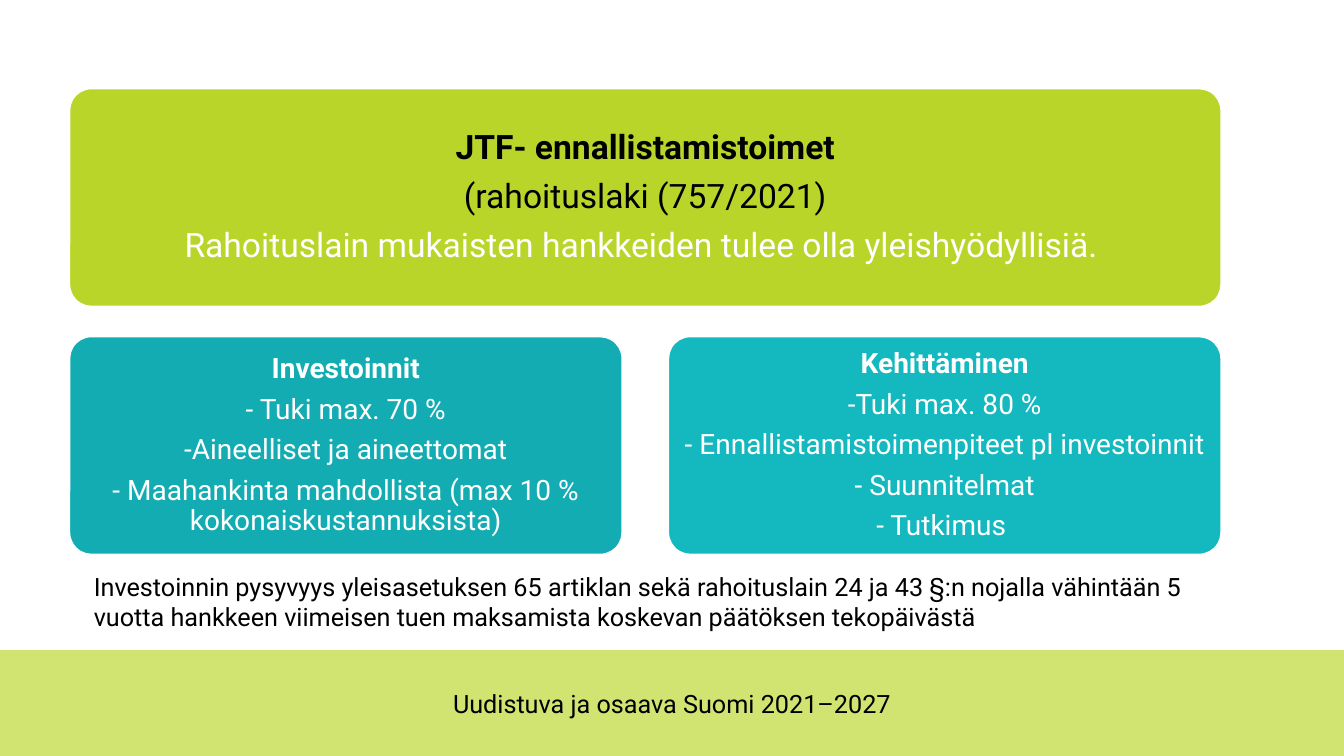
"""Build the slide on JTF restoration measures and their two support types."""
from lxml.etree import SubElement
from pptx import Presentation
from pptx.dml.color import RGBColor
from pptx.enum.shapes import MSO_SHAPE as Shape
from pptx.enum.text import MSO_ANCHOR as Anchor, MSO_AUTO_SIZE as AutoSize, PP_ALIGN as Align
from pptx.oxml.ns import qn
from pptx.util import Inches, Pt

COLORS = {"lime": "BAD52A", "teal": "13ACB3", "aqua": "14B8BF", "band": "D1E371",
          "white": "FFFFFF", "black": "000000"}
FONT = "Roboto"
CARDS = [
    {"box": (0.69, 0.88, 11.42, 2.16), "fill": "lime", "size": 24, "margin": 0.1,
     "lines": [("JTF- ennallistamistoimet", "black"),
               ("(rahoituslaki (757/2021)", "black"),
               ("Rahoituslain mukaisten hankkeiden tulee olla yleishyödyllisiä. ", "white")]},
    {"box": (0.69, 3.34, 5.48, 2.16), "fill": "teal", "size": 20, "margin": 0.08,
     "lines": [("Investoinnit", "white"),
               ("- Tuki max. 70 %", "white"),
               ("-Aineelliset ja aineettomat", "white"),
               ("- Maahankinta mahdollista (max 10 % kokonaiskustannuksista)", "white")]},
    {"box": (6.63, 3.34, 5.48, 2.16), "fill": "aqua", "size": 20, "margin": 0.08,
     "lines": [("Kehittäminen", "white"),
               ("-Tuki max. 80 %", "white"),
               ("- Ennallistamistoimenpiteet pl investoinnit", "white"),
               ("- Suunnitelmat", "white"),
               ("- Tutkimus ", "white")]},
]
NOTES = [
    {"box": (0.93, 5.67, 11.18, 0.61), "align": Align.LEFT, "anchor": Anchor.TOP,
     "text": "Investoinnin pysyvyys yleisasetuksen 65 artiklan sekä rahoituslain 24 ja 43 §:n "
             "nojalla vähintään 5 vuotta hankkeen viimeisen tuen maksamista koskevan "
             "päätöksen tekopäivästä"},
    {"box": (3.25, 6.83, 6.83, 0.3), "align": Align.CENTER, "anchor": Anchor.MIDDLE,
     "text": "Uudistuva ja osaava Suomi 2021–2027"},
]
BAND = (0, 6.45, 13.33, 1.05)
NOTE_SIZE = 18
CARD_INSET = 0.06
SPACE_RATIO = 0.37


def color(name):
    return RGBColor.from_string(COLORS[name])


def lengths(box):
    return [Inches(value) for value in box]


def set_all(target, values):
    for name, value in values.items():
        setattr(target, name, value)


def add_panel(slide, kind, box, fill):
    shape = slide.shapes.add_shape(kind, *lengths(box))
    shape.shadow.inherit = False
    shape.fill.solid()
    shape.fill.fore_color.rgb = color(fill)
    shape.line.fill.background()
    return shape


def set_frame(frame, anchor, margin):
    set_all(frame, {"word_wrap": True, "auto_size": AutoSize.NONE, "vertical_anchor": anchor})
    set_all(frame, {f"margin_{side}": Inches(margin)
                    for side in ("left", "top", "right", "bottom")})


def set_font(paragraph, size, name, bold=False):
    set_all(paragraph.font, {"name": FONT, "size": Pt(size), "bold": bold})
    paragraph.font.color.rgb = color(name)


def fill_card(slide, placeholder, card):
    panel = add_panel(slide, Shape.ROUNDED_RECTANGLE, card["box"], card["fill"])
    panel.adjustments[0] = 0.1
    panel.line.color.rgb = color("white")
    panel.line.width = Pt(1)
    panel.element.addnext(placeholder.element)

    left, top, width, height = card["box"]
    inner = (left + CARD_INSET, top + CARD_INSET,
             width - 2 * CARD_INSET, height - 2 * CARD_INSET)
    set_all(placeholder, dict(zip(("left", "top", "width", "height"), lengths(inner))))
    frame = placeholder.text_frame
    set_frame(frame, Anchor.MIDDLE, card["margin"])
    for index, (text, name) in enumerate(card["lines"]):
        paragraph = frame.add_paragraph() if index else frame.paragraphs[0]
        paragraph.text = text
        set_all(paragraph, {"alignment": Align.CENTER, "line_spacing": 0.9,
                            "space_before": Pt(0),
                            "space_after": Pt(SPACE_RATIO * card["size"])})
        properties = paragraph._p.get_or_add_pPr()
        properties.set("marL", "0")
        properties.set("indent", "0")
        SubElement(properties, qn("a:buNone"))
        set_font(paragraph, card["size"], name, bold=index == 0)


def add_note(slide, note):
    frame = slide.shapes.add_textbox(*lengths(note["box"])).text_frame
    set_frame(frame, note["anchor"], 0)
    paragraph = frame.paragraphs[0]
    paragraph.text = note["text"]
    paragraph.alignment = note["align"]
    set_font(paragraph, NOTE_SIZE, "black")


def main():
    presentation = Presentation()
    set_all(presentation, {"slide_width": Inches(13.33), "slide_height": Inches(7.5)})
    two_content = presentation.slide_layouts[3]
    slide = presentation.slides.add_slide(two_content)
    add_panel(slide, Shape.RECTANGLE, BAND, "band")
    for placeholder, card in zip(list(slide.placeholders), CARDS):
        fill_card(slide, placeholder, card)
    for note in NOTES:
        add_note(slide, note)
    presentation.save("out.pptx")


if __name__ == "__main__":
    main()
